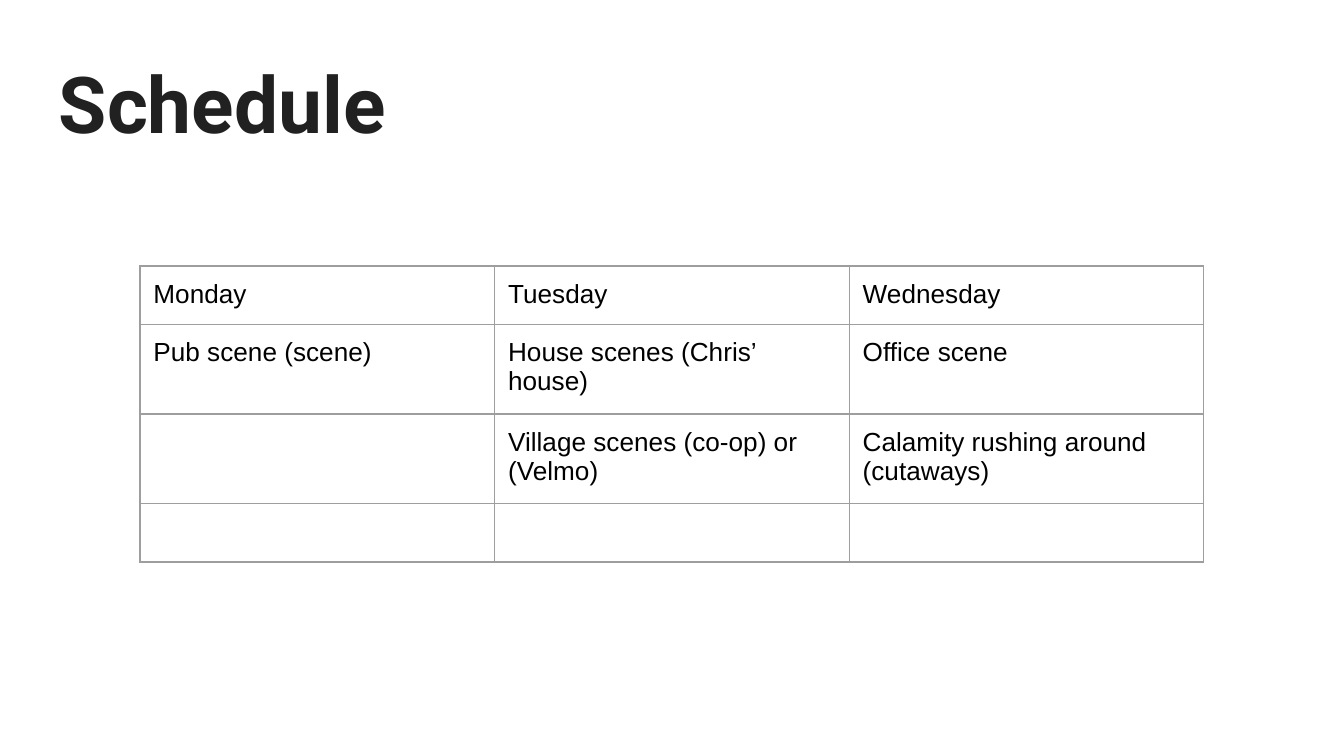
import dataclasses

import lxml.etree
import pptx
import pptx.dml.color
import pptx.enum.text
import pptx.oxml.ns
import pptx.util

Pt = pptx.util.Pt
qn = pptx.oxml.ns.qn


@dataclasses.dataclass(frozen=True)
class Theme:
    heading_font: str = "Roboto"
    body_font: str = "Arial"
    heading_size: float = 42
    body_size: float = 14
    heading_color: str = "212121"
    body_color: str = "000000"
    border_color: str = "9E9E9E"
    border_width: float = 0.75
    inset: float = 7.2


THEME = Theme()

SCHEDULE = [
    ["Monday", "Tuesday", "Wednesday"],
    ["Pub scene (scene)", "House scenes (Chris’ house)", "Office scene"],
    ["", "Village scenes (co-op) or (Velmo)", "Calamity rushing around (cutaways)"],
    ["", "", ""],
]


def write_text(frame, text, *, font, size, color, bold=False):
    para = frame.paragraphs[0]
    if not text:
        end = lxml.etree.SubElement(para._p, qn("a:endParaRPr"))
        end.set("sz", str(int(size * 100)))
        lxml.etree.SubElement(end, qn("a:latin")).set("typeface", font)
        return
    span = para.add_run()
    span.text = text
    span.font.name = font
    span.font.size = Pt(size)
    span.font.bold = bold
    span.font.color.rgb = pptx.dml.color.RGBColor.from_string(color)


def set_insets(target):
    for side in ("left", "right", "top", "bottom"):
        setattr(target, f"margin_{side}", Pt(THEME.inset))


def draw_borders(cell):
    properties = cell._tc.get_or_add_tcPr()
    for side in ("lnL", "lnR", "lnT", "lnB"):
        line = lxml.etree.SubElement(properties, qn(f"a:{side}"))
        line.set("w", str(Pt(THEME.border_width)))
        fill = lxml.etree.SubElement(line, qn("a:solidFill"))
        lxml.etree.SubElement(fill, qn("a:srgbClr")).set("val", THEME.border_color)


def add_heading(page, text, left, top, width, height):
    box = page.shapes.add_textbox(Pt(left), Pt(top), Pt(width), Pt(height))
    frame = box.text_frame
    frame.word_wrap = True
    frame.vertical_anchor = pptx.enum.text.MSO_ANCHOR.MIDDLE
    set_insets(frame)
    write_text(frame, text, font=THEME.heading_font, size=THEME.heading_size,
               color=THEME.heading_color, bold=True)


def add_schedule(page, entries, left, top, width, height):
    table = page.shapes.add_table(len(entries), len(entries[0]),
                                  Pt(left), Pt(top), Pt(width), Pt(height)).table
    table.first_row = False
    table.horz_banding = False
    for row, texts in zip(table.rows, entries):
        for cell, text in zip(row.cells, texts):
            set_insets(cell)
            draw_borders(cell)
            cell.fill.background()
            write_text(cell.text_frame, text, font=THEME.body_font,
                       size=THEME.body_size, color=THEME.body_color)


def main():
    deck = pptx.Presentation()
    deck.slide_width = Pt(720)
    deck.slide_height = Pt(405)
    page = deck.slides.add_slide(deck.slide_layouts[6])
    add_heading(page, "Schedule", 24.5, 23, 671, 63.4)
    add_schedule(page, SCHEDULE, 75, 142.5, 570, 121)
    deck.save("out.pptx")


if __name__ == "__main__":
    main()
